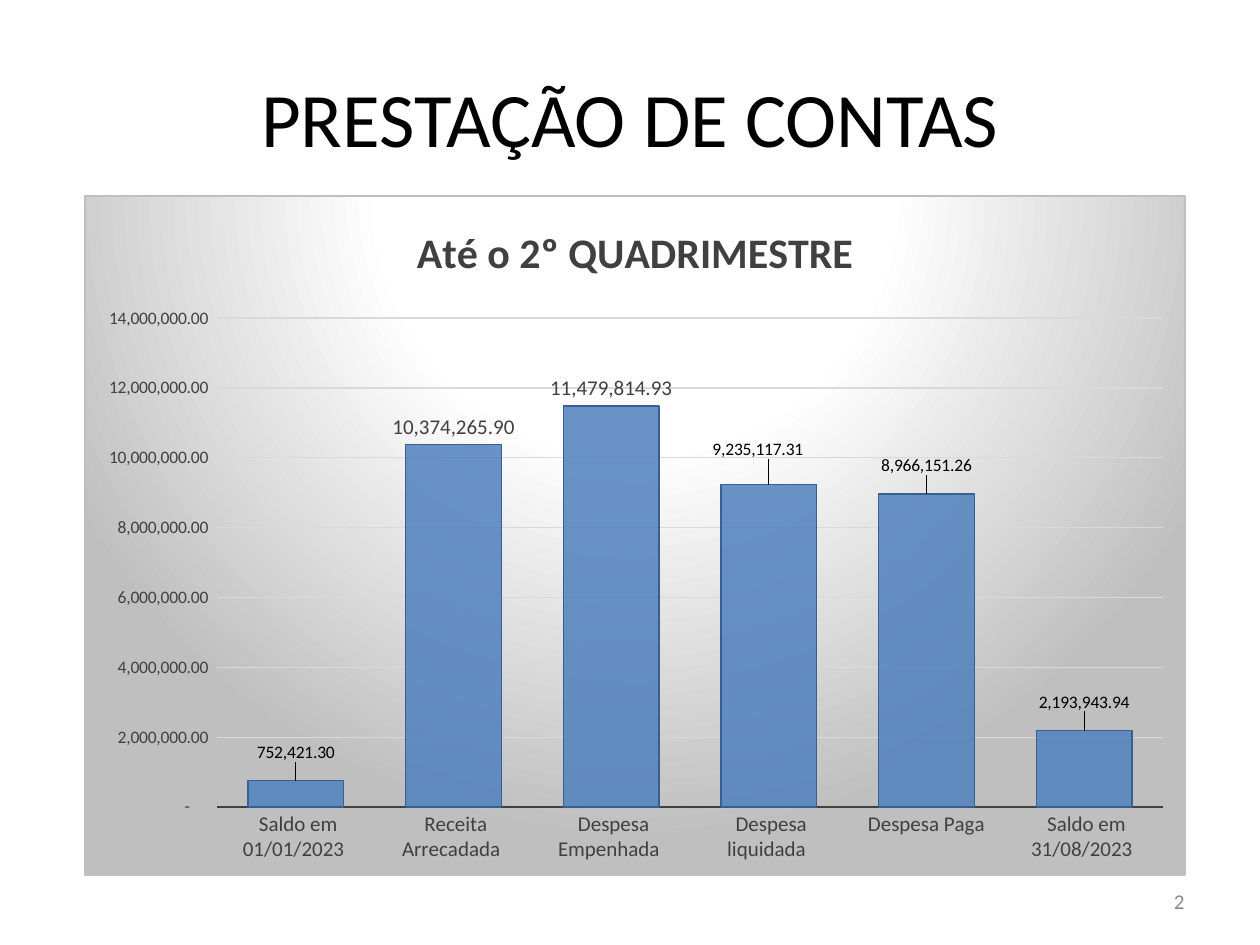
from copy import deepcopy

from pptx import Presentation
from pptx.chart.data import CategoryChartData
from pptx.dml.color import RGBColor
from pptx.enum.chart import XL_CHART_TYPE, XL_LABEL_POSITION, XL_TICK_MARK
from pptx.enum.text import MSO_ANCHOR, PP_ALIGN
from pptx.oxml import parse_xml
from pptx.oxml.ns import nsdecls, qn
from pptx.util import Inches, Pt

COLUMNS = XL_CHART_TYPE.COLUMN_CLUSTERED
OUTSIDE_END = XL_LABEL_POSITION.OUTSIDE_END
NO_TICK = XL_TICK_MARK.NONE
MIDDLE = MSO_ANCHOR.MIDDLE
CENTER = PP_ALIGN.CENTER
RIGHT = PP_ALIGN.RIGHT

ACCOUNTING = r'_(* #,##0.00_);_(* \(#,##0.00\);_(* "-"??_);_(@_)'
BALANCES = {
    " Saldo em 01/01/2023 ": 752421.30,
    " Receita Arrecadada ": 10374265.90,
    " Despesa Empenhada ": 11479814.93,
    " Despesa liquidada ": 9235117.31,
    " Despesa Paga ": 8966151.26,
    " Saldo em 31/08/2023 ": 2193943.94,
}
LABEL_SHIFTS = {0: (0, -0.02), 3: (-0.01, -0.03), 4: (0, -0.02), 5: (0, -0.02)}
PLOT_AREA = {"layoutTarget": "inner", "xMode": "edge", "yMode": "edge",
             "x": 0.12, "y": 0.18, "w": 0.86, "h": 0.72}


def color(value):
    return RGBColor.from_string(value)


def apply(target, values):
    for name, value in values.items():
        setattr(target, name, value)


def manual_layout(values):
    fields = "".join(f'<c:{name} val="{value}"/>' for name, value in values.items())
    return parse_xml(f"<c:layout {nsdecls('c')}><c:manualLayout>{fields}"
                     "</c:manualLayout></c:layout>")


class SlideBuilder:
    font_name = "Calibri"
    dark = "404040"

    def __init__(self, slide):
        self.slide = slide

    def style_font(self, font, size, font_color, bold=False):
        apply(font, {"name": self.font_name, "size": Pt(size), "bold": bold})
        font.color.rgb = color(font_color)

    def style_line(self, line, line_color, width):
        line.color.rgb = color(line_color)
        line.width = Pt(width)

    def add_text(self, text, box, size, font_color, alignment):
        shape = self.slide.shapes.add_textbox(*map(Inches, box))
        apply(shape.text_frame, {"word_wrap": True, "vertical_anchor": MIDDLE})
        paragraph = shape.text_frame.paragraphs[0]
        paragraph.alignment = alignment
        run = paragraph.add_run()
        run.text = text
        self.style_font(run.font, size, font_color)

    def add_column_chart(self, title, values, box):
        data = CategoryChartData(number_format=ACCOUNTING)
        data.categories = list(values)
        data.add_series("Series 1", list(values.values()))
        chart = self.slide.shapes.add_chart(COLUMNS, *map(Inches, box), data).chart
        self.style_font(chart.font, 10, "000000")
        apply(chart, {"has_legend": False, "has_title": True})
        chart.chart_title.include_in_layout = False
        paragraph = chart.chart_title.text_frame.paragraphs[0]
        run = paragraph.add_run()
        run.text = title
        self.style_font(run.font, 24, self.dark, bold=True)
        self.style_axes(chart)
        self.style_columns(chart.plots[0])
        self.style_chart_area(chart)

    def style_axes(self, chart):
        for axis, size in ((chart.category_axis, 12), (chart.value_axis, 10)):
            apply(axis, {"major_tick_mark": NO_TICK, "minor_tick_mark": NO_TICK})
            self.style_font(axis.tick_labels.font, size, self.dark)
        self.style_line(chart.category_axis.format.line, self.dark, 1.5)
        value_axis = chart.value_axis
        apply(value_axis, {"minimum_scale": 0, "maximum_scale": 14000000,
                           "major_unit": 2000000, "has_major_gridlines": True})
        apply(value_axis.tick_labels, {"number_format": ACCOUNTING,
                                       "number_format_is_linked": False})
        value_axis.format.line.fill.background()
        self.style_line(value_axis.major_gridlines.format.line, "D9D9D9", 0.75)

    def style_columns(self, plot):
        apply(plot, {"gap_width": 65, "vary_by_categories": False})
        series = plot.series[0]
        series.invert_if_negative = False
        series.format.fill.solid()
        series.format.fill.fore_color.rgb = color("4F81BD")
        fill = series.format.fill._xPr.find(qn("a:solidFill"))
        fill[0].append(parse_xml(f'<a:alpha {nsdecls("a")} val="85000"/>'))
        self.style_line(series.format.line, "376092", 0.75)
        labels = series.data_labels
        apply(labels, {"show_value": True, "position": OUTSIDE_END,
                       "number_format": ACCOUNTING,
                       "number_format_is_linked": False})
        self.style_font(labels.font, 12, self.dark)
        for index in LABEL_SHIFTS:
            series.points[index].data_label.position = OUTSIDE_END
        group = series._element.find(qn("c:dLbls"))
        shared = [group.find(qn(name)) for name in ("c:numFmt", "c:txPr")]
        for label, (x, y) in zip(group.findall(qn("c:dLbl")), LABEL_SHIFTS.values()):
            parts = [manual_layout({"x": x, "y": y}), *map(deepcopy, shared)]
            for position, part in enumerate(parts, start=1):
                label.insert(position, part)

    def style_chart_area(self, chart):
        chart_element = chart._chartSpace.find(qn("c:chart"))
        plot_area = chart_element.find(qn("c:plotArea"))
        for layout in plot_area.findall(qn("c:layout")):
            plot_area.remove(layout)
        plot_area.insert(0, manual_layout(PLOT_AREA))
        stops = "".join(
            f'<a:gs pos="{position}000"><a:srgbClr val="{value}"/></a:gs>'
            for position, value in ((0, "FFFFFF"), (39, "FFFFFF"), (100, "BFBFBF")))
        chart_element.addnext(parse_xml(
            f'<c:spPr {nsdecls("c", "a")}><a:gradFill><a:gsLst>{stops}</a:gsLst>'
            '<a:path path="circle"><a:fillToRect l="50000" t="-80000" r="50000" '
            'b="180000"/></a:path></a:gradFill><a:ln w="9525"><a:solidFill>'
            '<a:srgbClr val="BFBFBF"/></a:solidFill></a:ln></c:spPr>'))


def main():
    presentation = Presentation()
    apply(presentation, {"slide_width": Inches(10), "slide_height": Inches(7.5)})
    slide = presentation.slides.add_slide(presentation.slide_layouts[6])
    builder = SlideBuilder(slide)
    builder.add_text("2", (7.17, 6.95, 2.33, 0.4), 12, "898989", RIGHT)
    builder.add_text("PRESTAÇÃO DE CONTAS", (0.5, 0.3, 9, 1.25), 44, "000000", CENTER)
    builder.add_column_chart("Até o 2º QUADRIMESTRE", BALANCES, (0.67, 1.55, 8.74, 5.4))
    presentation.save("out.pptx")


if __name__ == "__main__":
    main()
